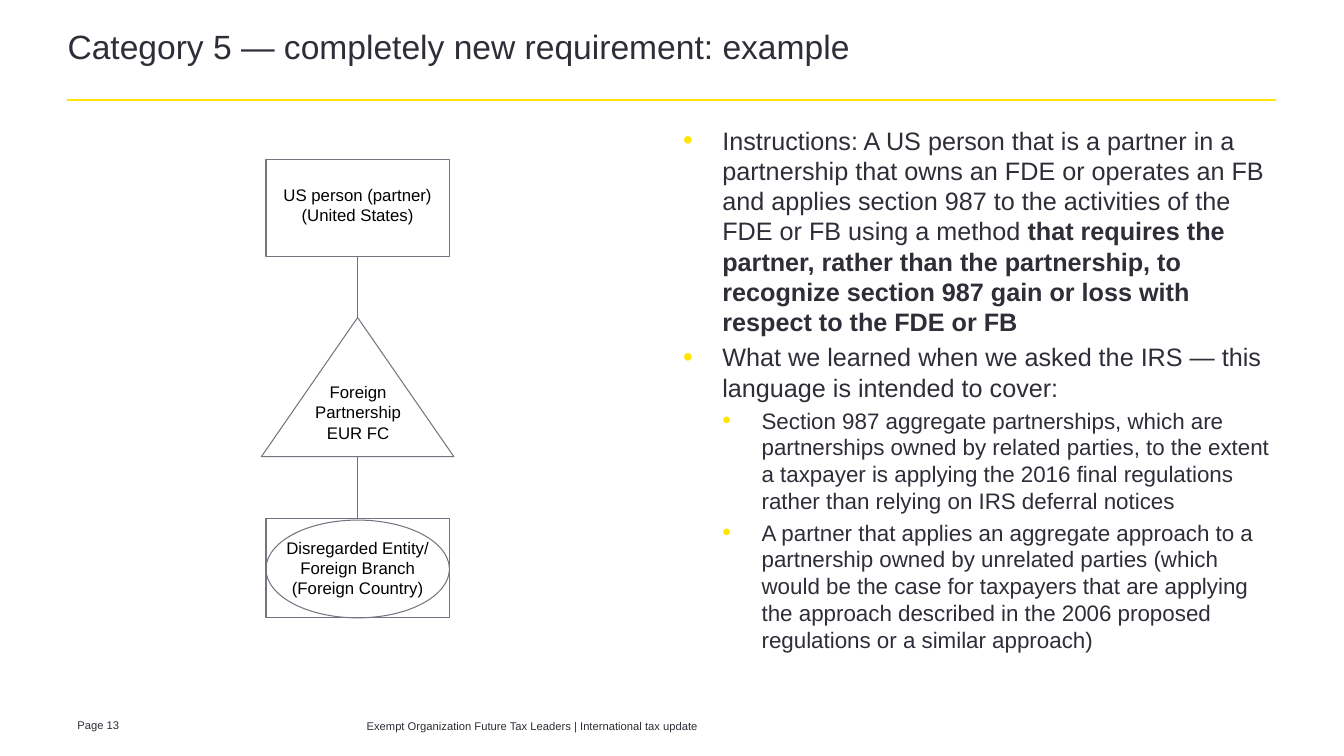
from lxml import etree
from pptx import Presentation
from pptx import util as u
from pptx.dml.color import RGBColor
from pptx.enum import shapes, text
from pptx.oxml.ns import qn

# Content
TITLE = "Category 5 — completely new requirement: example"
PAGE = "Page 13"
FOOTER = "Exempt Organization Future Tax Leaders | International tax update"
# (level, [(wording, bold), ...])
POINTS = [
    (0, [("Instructions: A US person that is a partner in a partnership that owns an FDE "
          "or operates an FB and applies section 987 to the activities of the FDE or FB "
          "using a method ", False),
         ("that requires the partner, rather than the partnership, to recognize section "
          "987 gain or loss with respect to the FDE or FB", True)]),
    (0, [("What we learned when we asked the IRS — this language is intended to cover:", False)]),
    (1, [("Section 987 aggregate partnerships, which are partnerships owned by related "
          "parties, to the extent a taxpayer is applying the 2016 final regulations rather "
          "than relying on IRS deferral notices", False)]),
    (1, [("A partner that applies an aggregate approach to a partnership owned by unrelated "
          "parties (which would be the case for taxpayers that are applying the approach "
          "described in the 2006 proposed regulations or a similar approach)", False)]),
]
PARTNER = ["US person (partner)", "(United States)"]
PARTNERSHIP = ["Foreign Partnership", "EUR FC"]
BRANCH = ["Disregarded Entity/ Foreign Branch", "(Foreign Country)"]

INK, GREY, YELLOW, WHITE, BLACK = "2E2E38", "747480", "FFE600", "FFFFFF", "000000"
LEFT, RIGHT = 0.67, 12.67
INDENT = 0.39
CENTRE = 3.55
BOX_WIDTH = 1.82
POINT_SIZES = [18, 16]
NO_INSETS = (0, 0, 0, 0)
SHAPE_INSETS = (0.1, 0.05, 0.1, 0.05)


def rgb(code):
    return RGBColor.from_string(code)


def inches(*lengths):
    return [u.Inches(length) for length in lengths]


def style(font, size, color, bold=False):
    for name, value in {"name": "Arial", "size": u.Pt(size), "bold": bold}.items():
        setattr(font, name, value)
    font.color.rgb = rgb(color)


def set_frame(frame, insets, anchor=text.MSO_ANCHOR.TOP):
    left, top, right, bottom = inches(*insets)
    settings = {"margin_left": left, "margin_top": top, "margin_right": right,
                "margin_bottom": bottom, "word_wrap": True, "vertical_anchor": anchor,
                "auto_size": text.MSO_AUTO_SIZE.NONE}
    for name, value in settings.items():
        setattr(frame, name, value)


def write(frame, lines, size, color, align=text.PP_ALIGN.LEFT):
    for i, line in enumerate(lines):
        para = frame.paragraphs[0] if i == 0 else frame.add_paragraph()
        para.alignment = align
        run = para.add_run()
        run.text = line
        style(run.font, size, color)


def add_text(at, lines, size, color, insets=SHAPE_INSETS, align=text.PP_ALIGN.LEFT):
    frame = slide.shapes.add_textbox(*inches(*at)).text_frame
    set_frame(frame, insets)
    write(frame, lines, size, color, align)


def add_line(start, end, color, width):
    line = slide.shapes.add_connector(shapes.MSO_CONNECTOR.STRAIGHT, *inches(*start, *end))
    line.line.color.rgb = rgb(color)
    line.line.width = u.Pt(width)
    etree.SubElement(line._element.spPr, qn("a:effectLst"))


def add_entity(kind, top, width, height, filled=True):
    entity = slide.shapes.add_shape(kind, *inches(CENTRE - width / 2, top, width, height))
    entity.shadow.inherit = False
    if filled:
        entity.fill.solid()
        entity.fill.fore_color.rgb = rgb(WHITE)
    else:
        entity.fill.background()
    entity.line.color.rgb = rgb(GREY)
    entity.line.width = u.Pt(0.75)
    return entity


def add_bullet(para, level):
    props = para._p.get_or_add_pPr()
    props.set("marL", str(u.Inches(INDENT * (level + 1))))
    props.set("indent", str(-u.Inches(INDENT)))
    color = etree.SubElement(props, qn("a:buClr"))
    etree.SubElement(color, qn("a:srgbClr"), val=YELLOW)
    etree.SubElement(props, qn("a:buSzPct"), val="110000")
    etree.SubElement(props, qn("a:buFont"), typeface="Arial")
    etree.SubElement(props, qn("a:buChar"), char="•")


deck = Presentation()
deck.slide_width, deck.slide_height = inches(13.34, 7.5)
slide = deck.slides.add_slide(deck.slide_layouts[5])

# Title and rule
title = slide.shapes.title
title.left, title.top, title.width, title.height = inches(LEFT, 0.32, RIGHT - LEFT, 0.65)
set_frame(title.text_frame, NO_INSETS)
write(title.text_frame, [TITLE], 24, INK)
title.text_frame.paragraphs[0].line_spacing = 0.85
add_line((LEFT, 0.99), (RIGHT, 0.99), YELLOW, 1.5)

# Ownership diagram: the line runs behind the entities
add_line((CENTRE, 2.55), (CENTRE, 5.16), GREY, 0.75)
partner = add_entity(shapes.MSO_SHAPE.RECTANGLE, 1.58, BOX_WIDTH, 0.97)
set_frame(partner.text_frame, (0.1, 0.25, 0.1, 0.05))
write(partner.text_frame, PARTNER, 12, BLACK, text.PP_ALIGN.CENTER)

add_entity(shapes.MSO_SHAPE.ISOSCELES_TRIANGLE, 3.15, 1.91, 1.38)
add_text((CENTRE - 0.67, 3.75, 1.35, 0.65), PARTNERSHIP, 12, BLACK,
         (0, 0.04, 0, 0), text.PP_ALIGN.CENTER)

branch = add_entity(shapes.MSO_SHAPE.RECTANGLE, 5.14, BOX_WIDTH, 0.99)
set_frame(branch.text_frame, SHAPE_INSETS, text.MSO_ANCHOR.MIDDLE)
write(branch.text_frame, BRANCH, 12, BLACK, text.PP_ALIGN.CENTER)
add_entity(shapes.MSO_SHAPE.OVAL, 5.16, BOX_WIDTH, 0.97, filled=False)

# Bulleted points
points = slide.shapes.add_textbox(*inches(6.78, 1.24, 5.89, 5.29)).text_frame
set_frame(points, NO_INSETS)
for i, (level, parts) in enumerate(POINTS):
    para = points.paragraphs[0] if i == 0 else points.add_paragraph()
    size = POINT_SIZES[level]
    para.level = level
    if i:
        para.space_before = u.Pt(size * 0.2)
    add_bullet(para, level)
    for wording, bold in parts:
        run = para.add_run()
        run.text = wording
        style(run.font, size, INK, bold)

# Footer
add_text((LEFT, 7.08, 0.73, 0.2), [PAGE], 8, INK)
add_text((3.54, 7.09, 6.67, 0.24), [FOOTER], 8, INK)

deck.save("out.pptx")
